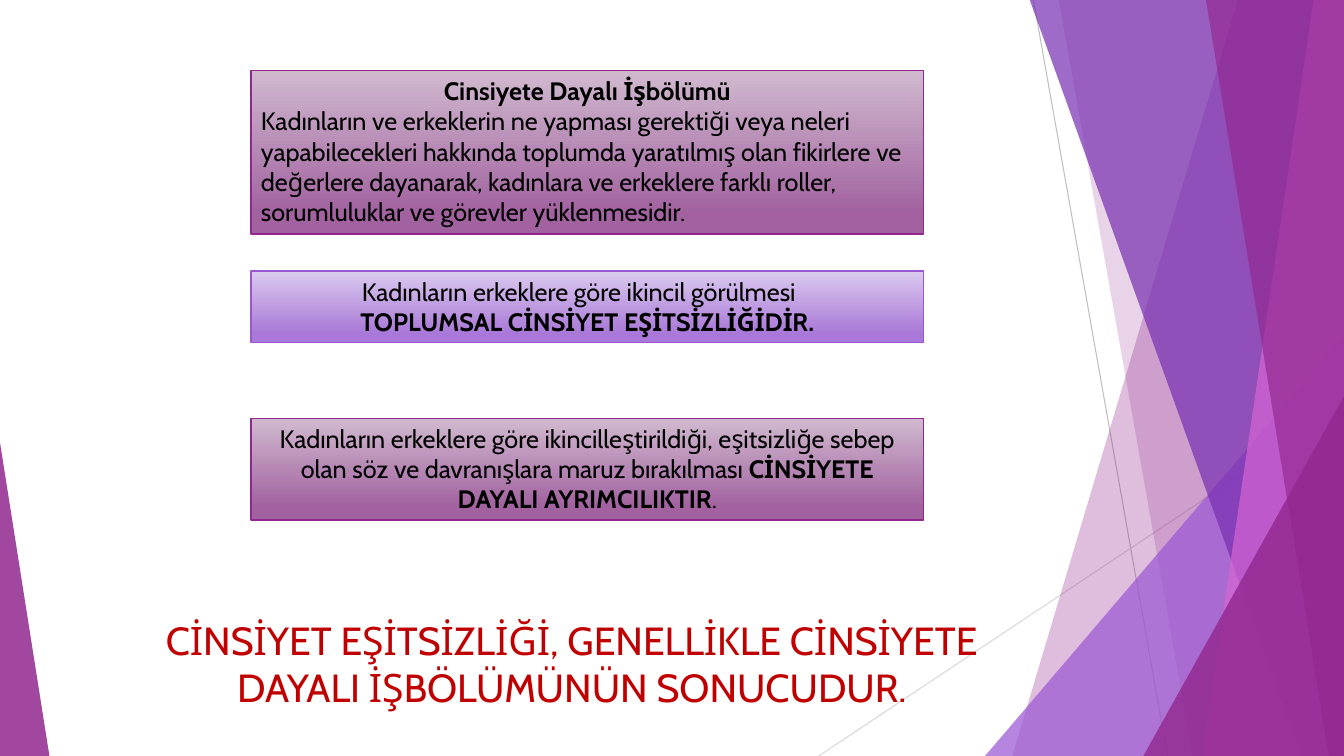
from dataclasses import dataclass

from lxml.etree import SubElement
from pptx import Presentation
from pptx.dml.color import RGBColor
from pptx.enum.shapes import MSO_CONNECTOR, MSO_SHAPE
from pptx.enum.text import MSO_ANCHOR, MSO_AUTO_SIZE, PP_ALIGN
from pptx.oxml.ns import qn
from pptx.util import Inches, Pt


@dataclass(frozen=True)
class Theme:
    font: str = "Cabin"
    body_size: int = 18
    title_size: int = 28
    text: str = "000000"
    title: str = "C00000"
    plum: str = "92278F"
    lilac: str = "9B57D3"
    violet: str = "762EB1"
    orchid: str = "D665D3"
    grey: str = "BFBFBF"
    light_grey: str = "D9D9D9"
    plum_fade: tuple = ("D0B9CF", "A1629F")
    lilac_fade: tuple = ("DACAEE", "A978D8")


THEME = Theme()
WIDTH, HEIGHT, TOP = 13.33, 7.5, -0.01
BOX_LEFT, BOX_WIDTH = 2.49, 6.67


def rgb(value):
    return RGBColor.from_string(value)


def paint(shape, color, opacity):
    shape.shadow.inherit = False
    shape.fill.solid()
    shape.fill.fore_color.rgb = rgb(color)
    shape.line.fill.background()
    tint = shape.fill._xPr.find(qn("a:solidFill"))[0]
    SubElement(tint, qn("a:alpha"), val=str(opacity * 1000))


def add_ray(slide, start, end, color):
    ray = slide.shapes.add_connector(
        MSO_CONNECTOR.STRAIGHT, *map(Inches, start + end))
    ray.line.color.rgb = rgb(color)
    ray.line.width = Pt(0.75)
    SubElement(ray.element.spPr, qn("a:effectLst"))


def add_band(slide, top_left, bottom_left, color, opacity):
    corners = [(top_left, TOP), (WIDTH, TOP), (WIDTH, HEIGHT), (bottom_left, HEIGHT)]
    points = [(Inches(x), Inches(y)) for x, y in corners]
    outline = slide.shapes.build_freeform(*points[0])
    outline.add_line_segments(points[1:], close=True)
    paint(outline.convert_to_shape(), color, opacity)


def add_corner(slide, left, top, width, apex, color, opacity):
    corner = slide.shapes.add_shape(
        MSO_SHAPE.ISOSCELES_TRIANGLE,
        Inches(left), Inches(top), Inches(width), Inches(HEIGHT - top))
    corner.adjustments[0] = apex
    paint(corner, color, opacity)


def format_run(run, size, color, bold=False):
    run.font.name = THEME.font
    run.font.size = Pt(size)
    run.font.bold = bold
    run.font.color.rgb = rgb(color)


def add_definition(slide, top, height, fade, border, paragraphs):
    box = slide.shapes.add_shape(
        MSO_SHAPE.RECTANGLE,
        Inches(BOX_LEFT), Inches(top), Inches(BOX_WIDTH), Inches(height))
    box.shadow.inherit = False
    box.fill.gradient()
    box.fill.gradient_angle = 270
    for stop, position, color in zip(box.fill.gradient_stops, (0, 0.88), fade):
        stop.position = position
        stop.color.rgb = rgb(color)
    box.line.color.rgb = rgb(border)
    box.line.width = Pt(1)
    frame = box.text_frame
    frame.word_wrap = True
    frame.vertical_anchor = MSO_ANCHOR.TOP
    frame.auto_size = MSO_AUTO_SIZE.SHAPE_TO_FIT_TEXT
    for index, (alignment, indent, pieces) in enumerate(paragraphs):
        paragraph = frame.add_paragraph() if index else frame.paragraphs[0]
        paragraph.alignment = alignment
        if indent:
            paragraph._p.get_or_add_pPr().set("marL", str(Inches(indent)))
        for wording, bold in pieces:
            run = paragraph.add_run()
            run.text = wording
            format_run(run, THEME.body_size, THEME.text, bold)


def add_conclusion(slide, wording):
    title = slide.shapes.title
    title.left, title.top = Inches(1.04), Inches(6.06)
    title.width, title.height = Inches(9.26), Inches(1.04)
    frame = title.text_frame
    frame.text = wording
    frame.word_wrap = True
    frame.vertical_anchor = MSO_ANCHOR.TOP
    frame.auto_size = MSO_AUTO_SIZE.SHAPE_TO_FIT_TEXT
    paragraph = frame.paragraphs[0]
    paragraph.alignment = PP_ALIGN.CENTER
    paragraph.line_spacing = 1.0
    paragraph.space_before = Pt(0)
    format_run(paragraph.runs[0], THEME.title_size, THEME.title)
    title.element.getparent().append(title.element)


def add_backdrop(slide):
    add_ray(slide, (10.25, 0), (11.58, HEIGHT), THEME.grey)
    add_ray(slide, (WIDTH, 4.03), (8.12, HEIGHT), THEME.light_grey)
    add_band(slide, 12.28, 10.04, THEME.plum, 30)
    add_band(slide, 10.5, 11.83, THEME.plum, 20)
    add_corner(slide, 9.77, 3.33, 3.56, 1, THEME.lilac, 72)
    add_band(slide, 10.21, 12.91, THEME.violet, 70)
    add_band(slide, 13.03, 11.92, THEME.orchid, 70)
    add_band(slide, 11.96, 13.18, THEME.plum, 65)
    add_corner(slide, 11.34, 3.93, 1.99, 1, THEME.plum, 80)
    add_corner(slide, 0, 4.39, 0.49, 0, THEME.plum, 85)


def main():
    presentation = Presentation()
    presentation.slide_width = Inches(WIDTH)
    presentation.slide_height = Inches(HEIGHT)
    slide = presentation.slides.add_slide(presentation.slide_layouts[5])
    add_backdrop(slide)
    add_definition(slide, 0.7, 1.62, THEME.plum_fade, THEME.plum, [
        (PP_ALIGN.CENTER, 0, [("Cinsiyete Dayalı İşbölümü", True)]),
        (PP_ALIGN.LEFT, 0, [(
            "Kadınların ve erkeklerin ne yapması gerektiği veya neleri "
            "yapabilecekleri hakkında toplumda yaratılmış olan fikirlere ve "
            "değerlere dayanarak, kadınlara ve erkeklere farklı roller, "
            "sorumluluklar ve görevler yüklenmesidir.", False)]),
    ])
    add_definition(slide, 2.69, 0.71, THEME.lilac_fade, THEME.lilac, [
        (PP_ALIGN.LEFT, 1, [("Kadınların erkeklere göre ikincil görülmesi", False)]),
        (PP_ALIGN.CENTER, 0, [("TOPLUMSAL CİNSİYET EŞİTSİZLİĞİDİR.", True)]),
    ])
    add_definition(slide, 4.15, 1.01, THEME.plum_fade, THEME.plum, [
        (PP_ALIGN.CENTER, 0, [
            ("Kadınların erkeklere göre ikincilleştirildiği, eşitsizliğe sebep "
             "olan söz ve davranışlara maruz bırakılması ", False),
            ("CİNSİYETE DAYALI AYRIMCILIKTIR", True),
            (".", False)]),
    ])
    add_conclusion(
        slide,
        "CİNSİYET EŞİTSİZLİĞİ, GENELLİKLE CİNSİYETE DAYALI İŞBÖLÜMÜNÜN SONUCUDUR.")
    presentation.save("out.pptx")


if __name__ == "__main__":
    main()
